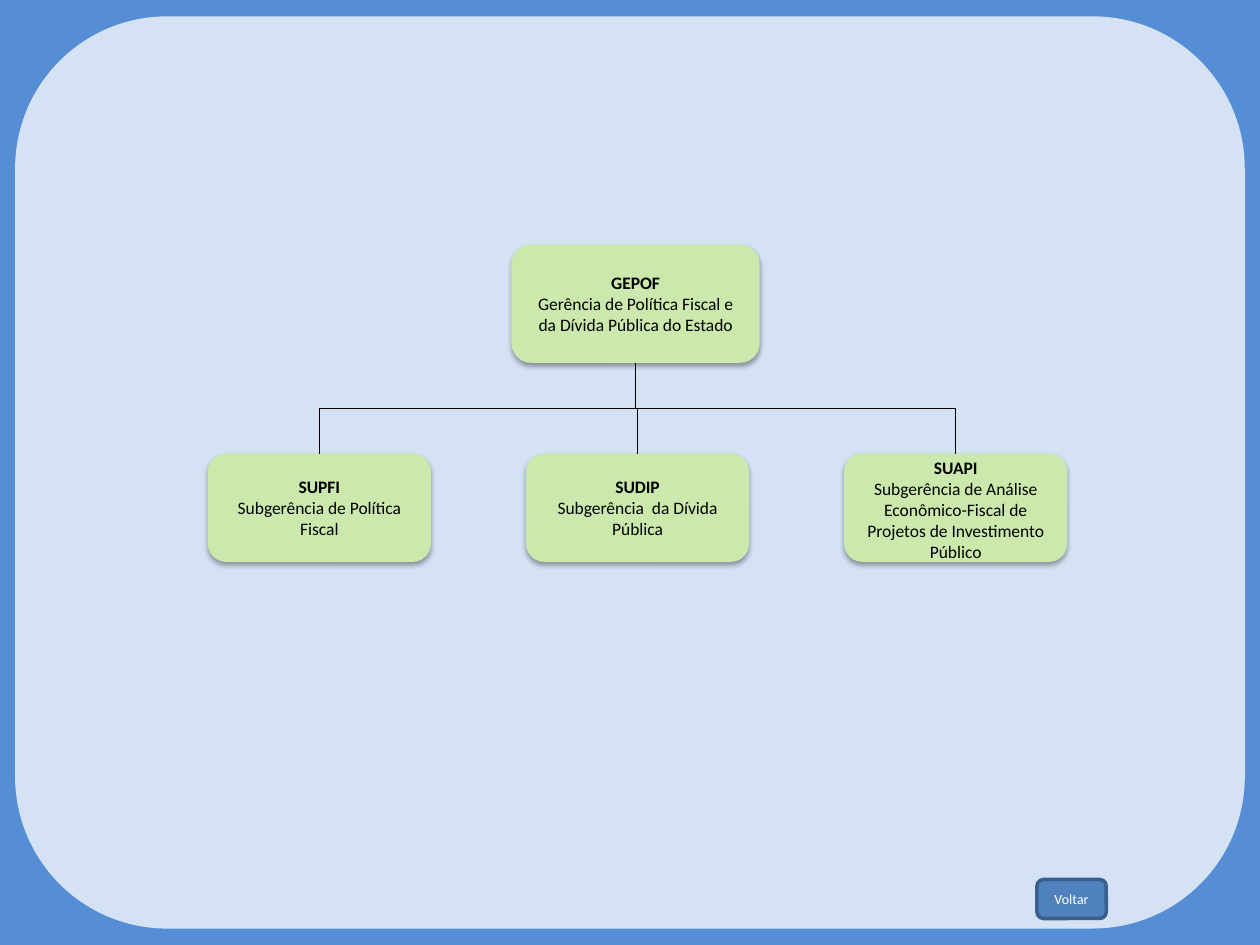
from dataclasses import dataclass

import lxml.etree
import pptx
import pptx.dml.color
import pptx.enum.shapes
import pptx.enum.text
import pptx.oxml.ns
import pptx.util
from pptx.util import Inches

RGBColor = pptx.dml.color.RGBColor
BACKGROUND = RGBColor(0x55, 0x8E, 0xD5)
PANEL = RGBColor(0xD4, 0xE2, 0xF4)
UNIT_FILL = RGBColor(0xCC, 0xE9, 0xAD)
BUTTON_FILL = RGBColor(0x4F, 0x81, 0xBD)
BUTTON_LINE = RGBColor(0x3A, 0x5F, 0x8C)
BLACK = RGBColor(0, 0, 0)
WHITE = RGBColor(0xFF, 0xFF, 0xFF)

FONT = "Calibri"
CHILD_LEFT = 1.65
CHILD_STEP = 2.525
CHILD_TOP = 3.6
CHILD_WIDTH = 1.77
CHILD_HEIGHT = 0.86
CHILD_INSET = 0.04


@dataclass
class Unit:
    acronym: str
    name: str
    left: float
    top: float
    width: float
    height: float
    side_inset: float = CHILD_INSET
    top_inset: float = CHILD_INSET
    bottom_inset: float = CHILD_INSET

    @property
    def center(self) -> float:
        return self.left + self.width / 2

    @property
    def bottom(self) -> float:
        return self.top + self.height


def child_unit(index: int, acronym: str, name: str, top_inset: float = CHILD_INSET) -> Unit:
    left = CHILD_LEFT + index * CHILD_STEP
    return Unit(acronym, name, left, CHILD_TOP, CHILD_WIDTH, CHILD_HEIGHT, top_inset=top_inset)


MANAGEMENT = Unit("GEPOF", "Gerência de Política Fiscal e da Dívida Pública do Estado",
                  4.06, 1.94, 1.97, 0.94, 0.1, 0.05, 0.05)
CHILDREN = [
    child_unit(0, "SUPFI", "Subgerência de Política Fiscal"),
    child_unit(1, "SUDIP", "Subgerência  da Dívida Pública"),
    child_unit(2, "SUAPI", "Subgerência de Análise Econômico-Fiscal de Projetos de "
               "Investimento Público", top_inset=0.07),
]


def add_rounded_box(slide, left: float, top: float, width: float, height: float, fill: RGBColor):
    shape = slide.shapes.add_shape(pptx.enum.shapes.MSO_SHAPE.ROUNDED_RECTANGLE,
                                   Inches(left), Inches(top), Inches(width), Inches(height))
    shape.shadow.inherit = False
    shape.fill.solid()
    shape.fill.fore_color.rgb = fill
    shape.line.fill.background()
    return shape


def write_text(paragraph, text: str, *, size: float = 10, color: RGBColor = BLACK,
               bold: bool = False) -> None:
    paragraph.alignment = pptx.enum.text.PP_ALIGN.CENTER
    run = paragraph.add_run()
    run.text = text
    run.font.name = FONT
    run.font.size = pptx.util.Pt(size)
    run.font.color.rgb = color
    run.font.bold = bold


def add_soft_shadow(shape) -> None:
    qn = pptx.oxml.ns.qn
    effects = shape.element.spPr.find(qn("a:effectLst"))
    shadow = lxml.etree.SubElement(effects, qn("a:outerShdw"), {
        "blurRad": str(pptx.util.Pt(3.1)), "dist": str(pptx.util.Pt(1.8)),
        "dir": "5400000", "rotWithShape": "0"})
    color = lxml.etree.SubElement(shadow, qn("a:srgbClr"), val=str(BLACK))
    lxml.etree.SubElement(color, qn("a:alpha"), val="35000")


def add_unit(slide, unit: Unit) -> None:
    shape = add_rounded_box(slide, unit.left, unit.top, unit.width, unit.height, UNIT_FILL)
    add_soft_shadow(shape)
    frame = shape.text_frame
    frame.word_wrap = True
    frame.vertical_anchor = pptx.enum.text.MSO_ANCHOR.MIDDLE
    frame.margin_left = frame.margin_right = Inches(unit.side_inset)
    frame.margin_top = Inches(unit.top_inset)
    frame.margin_bottom = Inches(unit.bottom_inset)
    write_text(frame.paragraphs[0], unit.acronym, bold=True)
    write_text(frame.add_paragraph(), unit.name)


def add_branch(slide, parent: Unit, child: Unit) -> None:
    middle_x = (parent.center + child.center) / 2
    middle_y = (parent.bottom + child.top) / 2
    half_drop = (child.top - parent.bottom) / 2
    half_span = abs(child.center - parent.center) / 2
    goes_left = child.center < parent.center
    offset = half_drop if goes_left else -half_drop
    connector = slide.shapes.add_connector(
        pptx.enum.shapes.MSO_CONNECTOR.ELBOW,
        Inches(middle_x - offset), Inches(middle_y - half_span),
        Inches(middle_x + offset), Inches(middle_y + half_span))
    connector.line.color.rgb = BLACK
    connector.line.width = pptx.util.Pt(0.75)
    properties = connector.element.spPr
    properties.get_or_add_xfrm().set("rot", "5400000" if goes_left else "16200000")
    lxml.etree.SubElement(properties, pptx.oxml.ns.qn("a:effectLst"))


def add_back_button(slide) -> None:
    button = add_rounded_box(slide, 8.23, 6.98, 0.55, 0.31, BUTTON_FILL)
    button.line.color.rgb = BUTTON_LINE
    button.line.width = pptx.util.Pt(2)
    button.text_frame.word_wrap = True
    button.text_frame.vertical_anchor = pptx.enum.text.MSO_ANCHOR.MIDDLE
    write_text(button.text_frame.paragraphs[0], "Voltar", size=8, color=WHITE)


def main() -> None:
    presentation = pptx.Presentation()
    presentation.slide_width = Inches(10)
    presentation.slide_height = Inches(7.5)
    slide = presentation.slides.add_slide(presentation.slide_layouts[6])
    slide.background.fill.solid()
    slide.background.fill.fore_color.rgb = BACKGROUND
    add_rounded_box(slide, 0.12, 0.13, 9.76, 7.24, PANEL)
    add_unit(slide, MANAGEMENT)
    for child in CHILDREN:
        add_unit(slide, child)
        add_branch(slide, MANAGEMENT, child)
    add_back_button(slide)
    presentation.save("out.pptx")


if __name__ == "__main__":
    main()
